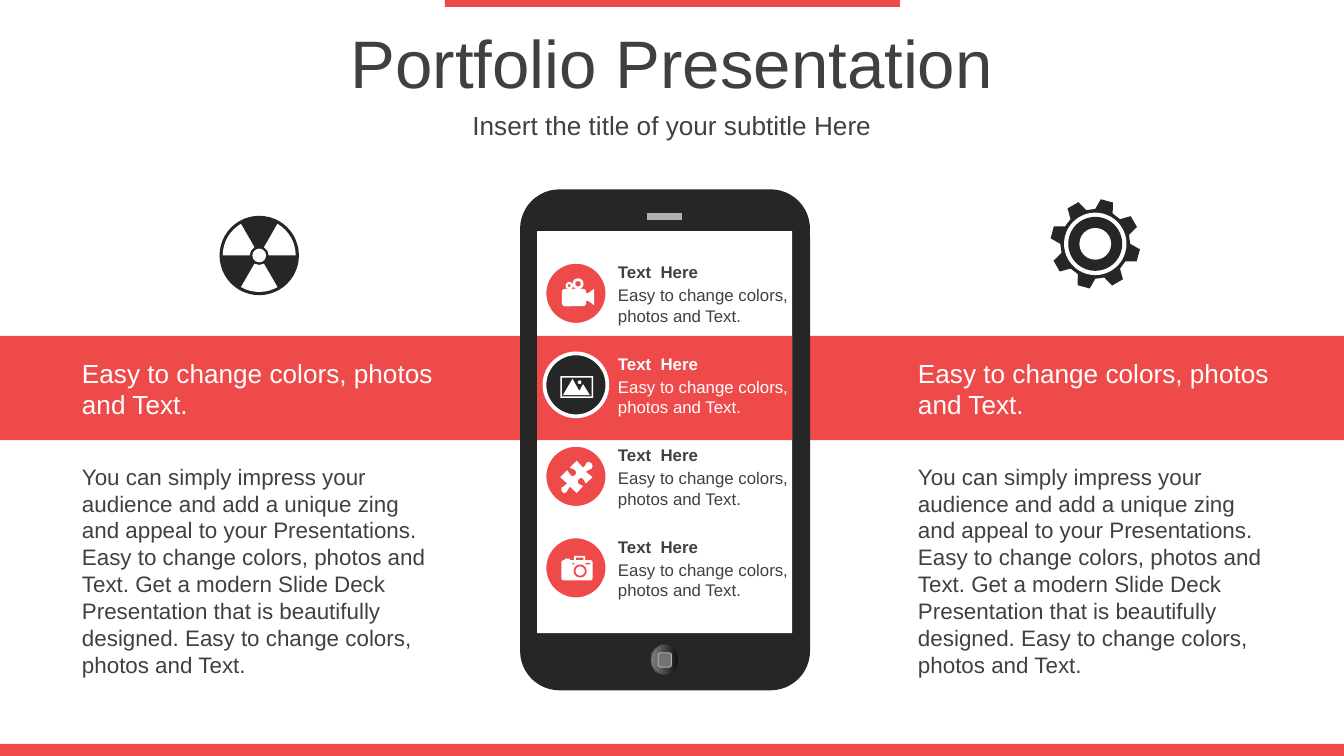
from math import cos, radians, sin

from pptx import Presentation
from pptx import util as u
from pptx.dml.color import RGBColor
from pptx.enum import shapes, text

RED, DARK, GREY, WHITE = "EF4A4A", "262626", "404040", "FFFFFF"
SILVER = "B0B0B0"
P = shapes.MSO_SHAPE
rgb = RGBColor.from_string


def paint(shape, fill, line=None, weight=1, adjust=()):
    shape.shadow.inherit = False
    shape.fill.solid()
    shape.fill.fore_color.rgb = rgb(fill)
    if line:
        shape.line.color.rgb = rgb(line)
        shape.line.width = u.Pt(weight)
    else:
        shape.line.fill.background()
    for i, value in enumerate(adjust):
        shape.adjustments[i] = value
    return shape


def write(shape, *paragraphs, size=12, color=GREY, bold=False, align=text.PP_ALIGN.LEFT):
    frame = shape.text_frame
    frame.word_wrap = True
    frame.auto_size = text.MSO_AUTO_SIZE.NONE
    frame.vertical_anchor = text.MSO_ANCHOR.MIDDLE
    for i, words in enumerate(paragraphs):
        paragraph = frame.add_paragraph() if i else frame.paragraphs[0]
        paragraph.alignment = align
        run = paragraph.add_run()
        run.text = words
        run.font.name = "Arial"
        run.font.size = u.Pt(size)
        run.font.bold = bold
        run.font.color.rgb = rgb(color)


prs = Presentation()
prs.slide_width, prs.slide_height = u.Cm(25.4), u.Cm(14.29)
slide = prs.slides.add_slide(prs.slide_layouts[5])
canvas = slide.shapes

# Bars, band and phone
for preset, box, fill, adjust in [
    (P.RECTANGLE, (8.41, 0, 8.6, 0.13), RED, ()),
    (P.RECTANGLE, (0, 14.06, 25.4, 0.23), RED, ()),
    (P.RECTANGLE, (0, 6.35, 25.4, 1.97), RED, ()),
    (P.ROUNDED_RECTANGLE, (9.83, 3.58, 5.48, 9.47), DARK, (0.136,)),
    (P.RECTANGLE, (12.23, 4.03, 0.66, 0.13), SILVER, ()),
    (P.RECTANGLE, (10.15, 4.37, 4.82, 7.6), WHITE, ()),
    (P.RECTANGLE, (10.15, 6.35, 4.82, 1.97), RED, ()),
]:
    paint(canvas.add_shape(preset, *map(u.Cm, box)), fill, adjust=adjust)

# Home button
button = paint(canvas.add_shape(P.OVAL, *map(u.Cm, (12.3, 12.18, 0.52, 0.58))), DARK, DARK, 0.25)
button.fill.gradient()
button.fill.gradient_angle = 180
for stop, shade in zip(button.fill.gradient_stops, ("0F0F0F", "808080")):
    stop.color.rgb = rgb(shade)
paint(canvas.add_shape(P.ROUNDED_RECTANGLE, *map(u.Cm, (12.44, 12.34, 0.25, 0.27))),
      "737373", SILVER, 0.5)

# Title and subtitle
title = canvas.title
title.left, title.top, title.width, title.height = map(u.Cm, (0, 0.36, 25.4, 1.6))
write(title, "Portfolio Presentation", size=36, align=text.PP_ALIGN.CENTER)
subtitle = canvas.add_textbox(*map(u.Cm, (0, 1.96, 25.4, 0.79)))
write(subtitle, "Insert the title of your subtitle Here", size=14, align=text.PP_ALIGN.CENTER)

# Phone menu
tagline = "Easy to change colors, photos and Text."
for row in range(4):
    active = row == 1
    shift = 1.73 * row
    color = WHITE if active else GREY
    paint(canvas.add_shape(P.OVAL, *map(u.Cm, (10.29, 4.95 + shift, 1.19, 1.19))),
          DARK if active else RED, WHITE, 2)
    heading = canvas.add_textbox(*map(u.Cm, (11.43, 4.82 + shift, 3.78, 0.64)))
    write(heading, "Text  Here", size=9, color=color, bold=True)
    detail = canvas.add_textbox(*map(u.Cm, (11.43, 5.26 + shift, 3.78, 1.02)))
    write(detail, tagline, size=9, color=color)

# Side columns
for left in (1.3, 17.1):
    lead = canvas.add_textbox(*map(u.Cm, (left, 6.62, 7.19, 1.45)))
    write(lead, tagline, size=14, color=WHITE)
    story = canvas.add_textbox(*map(u.Cm, (left, 8.6, 7.19, 4.36)))
    write(story,
          "You can simply impress your audience and add a unique zing and appeal "
          "to your Presentations.",
          "Easy to change colors, photos and Text. Get a modern Slide Deck Presentation "
          "that is beautifully designed. Easy to change colors, photos and Text.")

# Icon outlines: gear teeth, film camera lens, mountains, puzzle piece
gear_x, gear_y = 20.7, 4.61
gear = [(gear_x + radius * cos(radians(angle + turn)), gear_y + radius * sin(radians(angle + turn)))
        for angle in range(-75, 285, 45)
        for turn, radius in ((-15, 0.66), (-8, 0.85), (8, 0.85), (15, 0.66))]
lens = [(11.05, 5.54), (11.12, 5.54), (11.23, 5.46), (11.23, 5.77), (11.12, 5.69), (11.05, 5.69)]
mountains = [(10.82, 7.16), (10.95, 7.39), (11.02, 7.26), (11.15, 7.47), (10.64, 7.47)]
puzzle = [
    (11.18, 8.76), (11.2, 8.81), (11.18, 8.86), (11.13, 8.88), (11.07, 8.92), (11.2, 9.02),
    (11.07, 9.14), (11.04, 9.08), (11.01, 9.04), (10.96, 9.04), (10.92, 9.08), (10.92, 9.13),
    (10.96, 9.16), (11.02, 9.19), (10.9, 9.32), (10.77, 9.2), (10.73, 9.26), (10.7, 9.31),
    (10.65, 9.32), (10.61, 9.27), (10.61, 9.22), (10.66, 9.19), (10.72, 9.14), (10.59, 9.02),
    (10.72, 8.89), (10.76, 8.95), (10.79, 8.99), (10.84, 9), (10.88, 8.97), (10.89, 8.92),
    (10.86, 8.88), (10.77, 8.84), (10.9, 8.71), (11.02, 8.84), (11.06, 8.8), (11.08, 8.75),
    (11.13, 8.73)]
for outline, fill in ((gear, DARK), (lens, WHITE), (mountains, WHITE), (puzzle, WHITE)):
    points = [(u.Cm(x), u.Cm(y)) for x, y in outline]
    builder = canvas.build_freeform(*points[0])
    builder.add_line_segments(points[1:])
    paint(builder.convert_to_shape(), fill)

# Concentric discs of the gear and the radiation sign
for x, y, radius, fill in [
    (gear_x, gear_y, 0.59, WHITE), (gear_x, gear_y, 0.51, DARK), (gear_x, gear_y, 0.3, WHITE),
    (4.9, 4.83, 0.75, DARK), (4.9, 4.83, 0.13, WHITE),
]:
    paint(canvas.add_shape(P.OVAL, *map(u.Cm, (x - radius, y - radius, 2 * radius, 2 * radius))),
          fill)

# Light sectors of the radiation sign (an angle adjustment is 0.6 per degree)
for start in (60, 180, 300):
    paint(canvas.add_shape(P.BLOCK_ARC, *map(u.Cm, (4.21, 4.14, 1.38, 1.38))), WHITE,
          adjust=(start * 0.6, (start + 60) % 360 * 0.6, 0.37))

# Small icon parts: film camera, landscape, photo camera
for preset, box, fill, adjust in [
    (P.ROUNDED_RECTANGLE, (10.62, 5.46, 0.46, 0.33), WHITE, (0.18,)),
    (P.DONUT, (10.82, 5.26, 0.21, 0.21), WHITE, (0.25,)),
    (P.DONUT, (10.69, 5.33, 0.14, 0.14), WHITE, (0.3,)),
    (P.FRAME, (10.59, 7.11, 0.62, 0.41), WHITE, (0.07,)),
    (P.OVAL, (10.92, 7.19, 0.07, 0.07), WHITE, ()),
    (P.ROUNDED_RECTANGLE, (10.61, 10.59, 0.59, 0.38), WHITE, (0.1,)),
    (P.FRAME, (10.85, 10.51, 0.21, 0.13), WHITE, (0.25,)),
    (P.RECTANGLE, (10.67, 10.56, 0.1, 0.05), WHITE, ()),
    (P.DONUT, (10.84, 10.67, 0.25, 0.25), RED, (0.14,)),
    (P.RECTANGLE, (10.82, 10.64, 0.03, 0.03), RED, ()),
    (P.RECTANGLE, (11.07, 10.64, 0.08, 0.03), RED, ()),
]:
    paint(canvas.add_shape(preset, *map(u.Cm, box)), fill, adjust=adjust)

prs.save("out.pptx")
